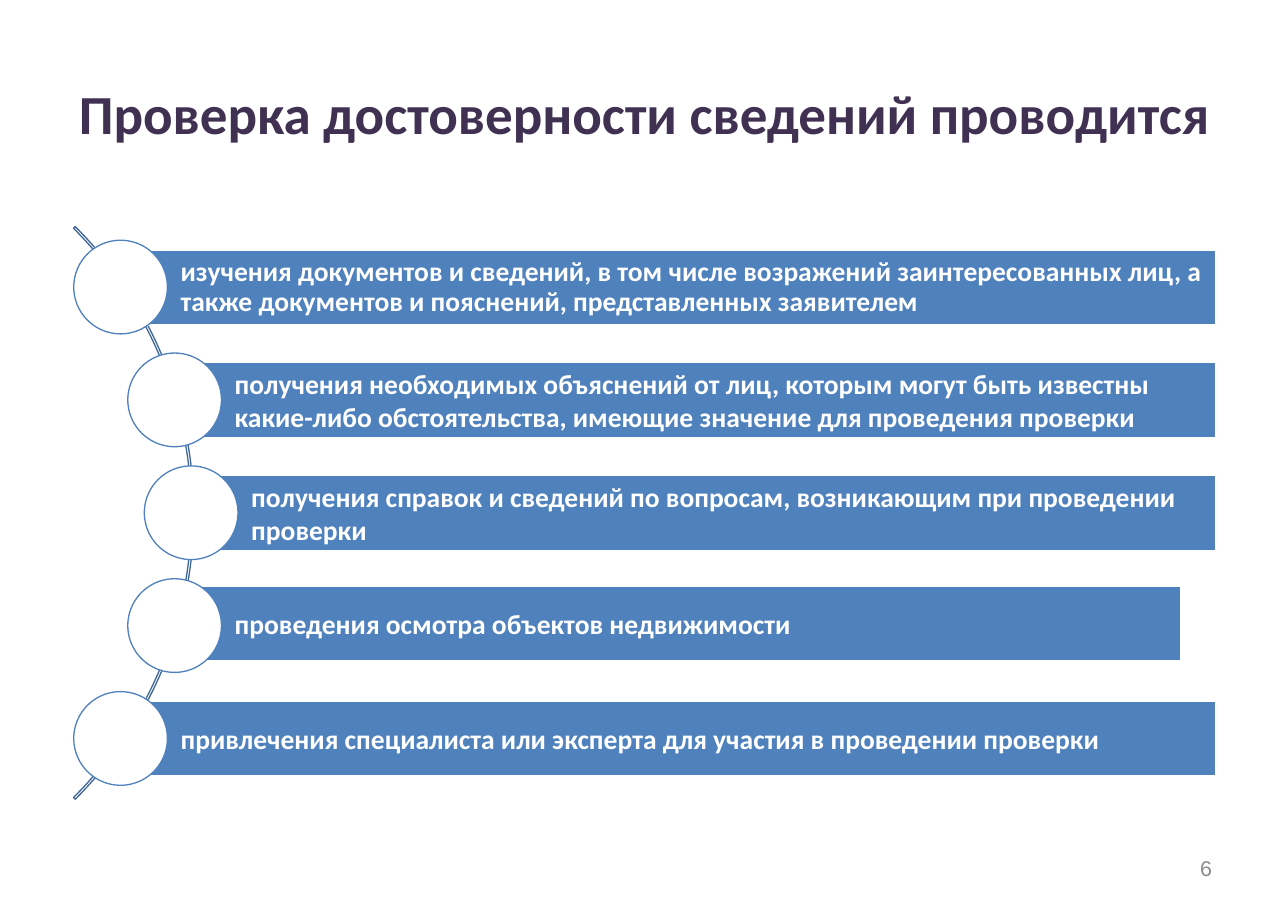
from pptx import Presentation
from pptx.dml.color import RGBColor
from pptx.enum.shapes import MSO_SHAPE
from pptx.enum.text import MSO_ANCHOR, MSO_AUTO_SIZE, PP_ALIGN
from pptx.util import Pt

ARC, BAR, CIRCLE = MSO_SHAPE.BLOCK_ARC, MSO_SHAPE.RECTANGLE, MSO_SHAPE.OVAL
MIDDLE, NO_AUTOFIT = MSO_ANCHOR.MIDDLE, MSO_AUTO_SIZE.NONE
LEFT, CENTER, RIGHT = PP_ALIGN.LEFT, PP_ALIGN.CENTER, PP_ALIGN.RIGHT

COLORS = {"title": "403152", "blue": "4F81BD", "arc": "3F6797",
          "white": "FFFFFF", "number": "8C8C8C"}
FONTS = {
    "title": {"name": "Calibri", "size": Pt(36), "bold": True},
    "bar": {"name": "Calibri", "size": Pt(18), "bold": True},
    "number": {"name": "Arial", "size": Pt(14), "bold": False},
}
WIDE_INSETS = (7.92, 3.96, 7.92, 3.96)
BAR_INSETS = (38.9, 3.6, 3.6, 3.6)

CIRCLE_SIZE = 61.2
CIRCLE_TOP = 157
STEP = 73.75
BAR_HEIGHT = 49
BAR_OFFSET = 31

STEPS = [
    (48.2, 163.4, 794.2, 0.9, "изучения документов и сведений, в том числе возражений заинтересованных лиц, а также документов и пояснений, представленных заявителем"),
    (83.5, 236.9, 794.2, 1.0, "получения необходимых объяснений от лиц, которым могут быть известны какие-либо обстоятельства, имеющие значение для проведения проверки"),
    (94.3, 310.9, 794.2, 1.0, "получения справок и сведений по вопросам, возникающим при проведении проверки"),
    (83.5, 383.1, 771.8, 1.0, "проведения осмотра объектов недвижимости"),
    (48.2, 458.1, 794.2, 1.0, "привлечения специалиста или эксперта для участия в проведении проверки"),
]


def write_text(shape, text, font_key, color_key, alignment, insets):
    frame = shape.text_frame
    frame.text = text
    left, top, right, bottom = insets
    settings = {"word_wrap": True, "auto_size": NO_AUTOFIT, "vertical_anchor": MIDDLE,
                "margin_left": Pt(left), "margin_top": Pt(top),
                "margin_right": Pt(right), "margin_bottom": Pt(bottom)}
    for name, value in settings.items():
        setattr(frame, name, value)
    paragraph = frame.paragraphs[0]
    paragraph.alignment = alignment
    for name, value in FONTS[font_key].items():
        setattr(paragraph.font, name, value)
    paragraph.font.color.rgb = RGBColor.from_string(COLORS[color_key])
    return paragraph


def draw_shape(kind, left, top, width, height, fill_key, line_key):
    shape = slide.shapes.add_shape(kind, Pt(left), Pt(top), Pt(width), Pt(height))
    shape.shadow.inherit = False
    if fill_key:
        shape.fill.solid()
        shape.fill.fore_color.rgb = RGBColor.from_string(COLORS[fill_key])
    else:
        shape.fill.background()
    shape.line.color.rgb = RGBColor.from_string(COLORS[line_key])
    shape.line.width = Pt(0.85)
    return shape


presentation = Presentation()
presentation.slide_width = Pt(841.7)
presentation.slide_height = Pt(595.4)
slide = presentation.slides.add_slide(presentation.slide_layouts[5])

title = slide.shapes.title
title_box = {"left": 42.5, "top": 23.8, "width": 757.5, "height": 99.4}
for name, value in title_box.items():
    setattr(title, name, Pt(value))
write_text(title, "Проверка достоверности сведений проводится",
           "title", "title", CENTER, WIDE_INSETS)

arc = draw_shape(ARC, -402.5, 70.6, 529.2, 529.2, None, "arc")
for index, value in enumerate((189, 27, 0.003)):
    arc.adjustments[index] = value

for index, (circle_left, bar_top, bar_right, spacing, text) in enumerate(STEPS):
    bar_left = circle_left + BAR_OFFSET
    bar = draw_shape(BAR, bar_left, bar_top, bar_right - bar_left, BAR_HEIGHT, "blue", "white")
    paragraph = write_text(bar, text, "bar", "white", LEFT, BAR_INSETS)
    paragraph.line_spacing = spacing
    draw_shape(CIRCLE, circle_left, CIRCLE_TOP + index * STEP,
               CIRCLE_SIZE, CIRCLE_SIZE, "white", "blue")

number = slide.shapes.add_textbox(Pt(603.4), Pt(551.5), Pt(196.6), Pt(31.7))
write_text(number, "6", "number", "number", RIGHT, WIDE_INSETS)

presentation.save("out.pptx")
